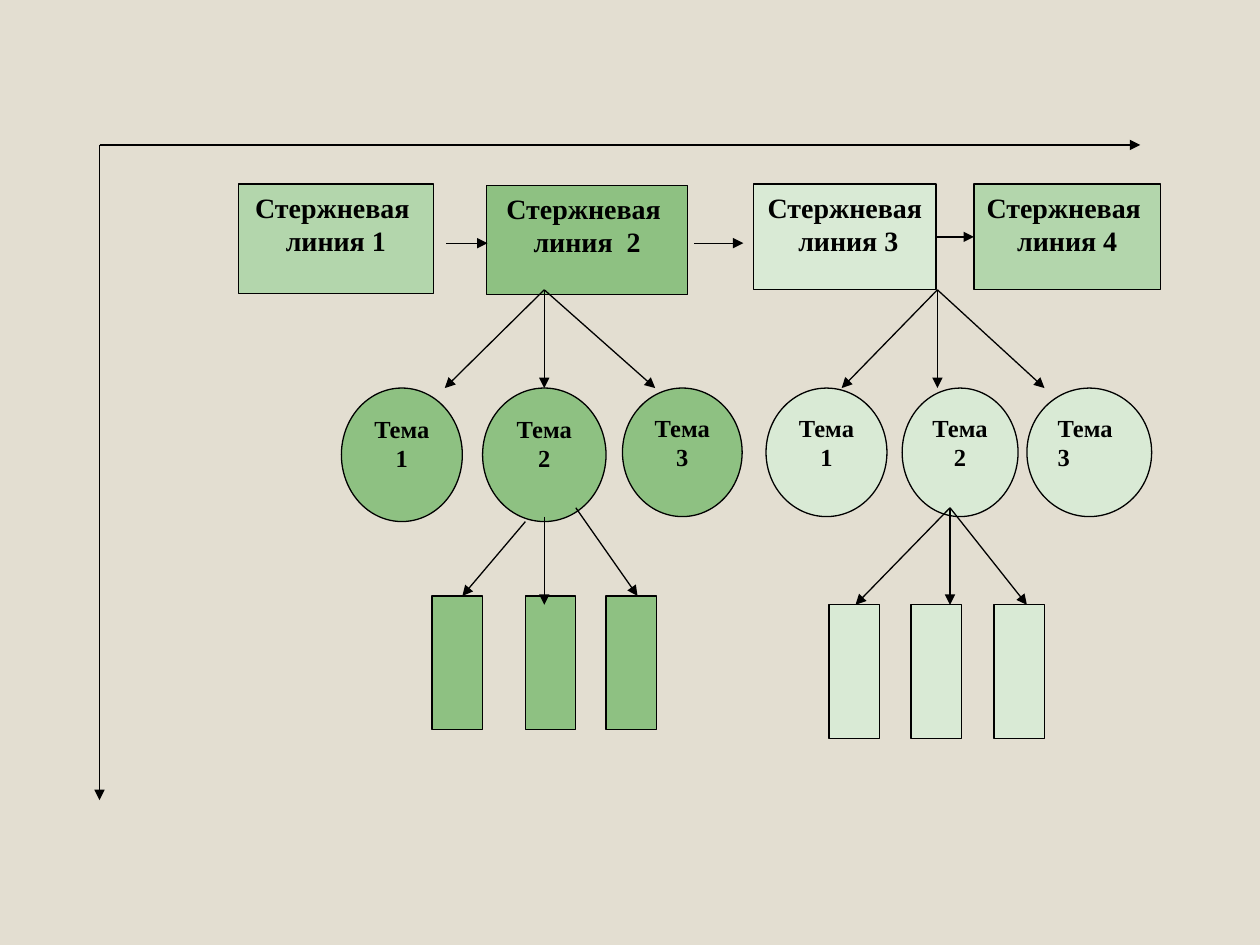
from pptx import Presentation
from pptx.dml.color import RGBColor
from pptx.enum.shapes import MSO_CONNECTOR as Connector, MSO_SHAPE as Preset
from pptx.enum.text import MSO_ANCHOR as Anchor, PP_ALIGN as Align
from pptx.oxml.ns import qn
from pptx.util import Inches, Pt
from lxml.etree import SubElement

THEME = {
    "background": "E3DED1", "ink": "000000",
    "soft": "B3D6AC", "strong": "8EC182", "pale": "D9EAD5",
    "font": "Times New Roman", "core size": 16, "topic size": 14,
    "outline": 0.75, "axis": 1, "space after": 10,
}

# Content: text, colour, left, top, width, height
CORE_LINES = [
    ("Стержневая  линия 1", "soft", 1.89, 1.46, 1.55, 0.87),
    ("Стержневая  линия  2", "strong", 3.86, 1.47, 1.6, 0.87),
    ("Стержневая  линия 3", "pale", 5.98, 1.46, 1.45, 0.84),
    ("Стержневая  линия 4", "soft", 7.73, 1.46, 1.48, 0.84),
]

# Topics: text, left, width, height, alignment; leaves: left edges
TOPIC_TOP = 3.08
LEAF_WIDTH, LEAF_HEIGHT = 0.4, 1.06
BRANCHES = [
    {
        "colour": "strong", "leaf top": 4.73,
        "topics": [("Тема 1", 2.71, 0.96, 1.06, Align.CENTER),
                   ("Тема 2", 3.83, 0.98, 1.06, Align.CENTER),
                   ("Тема 3", 4.94, 0.95, 1.02, Align.CENTER)],
        "leaves": [3.43, 4.17, 4.81],
        "topic arrows": ((4.32, 2.3), [3.53, 4.32, 5.2]),
        "leaf arrows": [((4.17, 4.14), (3.67, 4.73)),
                        ((4.32, 4.1), (4.32, 4.8)),
                        ((4.57, 4.03), (5.06, 4.73))],
    },
    {
        "colour": "pale", "leaf top": 4.8,
        "topics": [("Тема 1", 6.08, 0.96, 1.02, Align.CENTER),
                   ("Тема 2", 7.16, 0.92, 1.02, Align.CENTER),
                   ("Тема 3", 8.15, 0.99, 1.02, Align.LEFT)],
        "leaves": [6.58, 7.23, 7.89],
        "topic arrows": ((7.44, 2.3), [6.68, 7.44, 8.29]),
        "leaf arrows": [((7.54, 4.03), (x, 4.8)) for x in (6.79, 7.54, 8.15)],
    },
]

AXIS_ORIGIN = (0.79, 1.15)
AXIS_ENDS = [(9.05, 1.15), (0.79, 6.35)]
CORE_ARROWS = [((3.54, 1.93), (3.87, 1.93)), ((5.51, 1.93), (5.9, 1.93))]


def colour(name):
    return RGBColor.from_string(THEME[name])


def set_attributes(target, values):
    for name, value in values.items():
        setattr(target, name, value)


def add_box(slide, preset, place, fill, text="", size=None, align=Align.CENTER):
    shape = slide.shapes.add_shape(preset, *map(Inches, place))
    shape.shadow.inherit = False
    shape.fill.solid()
    shape.fill.fore_color.rgb = colour(fill)
    shape.line.color.rgb = colour("ink")
    shape.line.width = Pt(THEME["outline"])
    if text:
        frame = shape.text_frame
        set_attributes(frame, {"word_wrap": True, "vertical_anchor": Anchor.TOP})
        paragraph = frame.paragraphs[0]
        set_attributes(paragraph, {"alignment": align,
                                   "space_after": Pt(THEME["space after"])})
        run = paragraph.add_run()
        run.text = text
        set_attributes(run.font, {"name": THEME["font"], "size": Pt(THEME[size]),
                                  "bold": True})
        run.font.color.rgb = colour("ink")
    return shape


def add_arrow(slide, start, end, weight="outline"):
    arrow = slide.shapes.add_connector(Connector.STRAIGHT, *map(Inches, start + end))
    arrow.line.color.rgb = colour("ink")
    arrow.line.width = Pt(THEME[weight])
    SubElement(arrow.line._get_or_add_ln(), qn("a:tailEnd"), type="triangle")
    SubElement(arrow._element.spPr, qn("a:effectLst"))
    return arrow


def main():
    presentation = Presentation()
    presentation.slide_width, presentation.slide_height = Inches(10), Inches(7.5)
    slide = presentation.slides.add_slide(presentation.slide_layouts[6])
    slide.background.fill.solid()
    slide.background.fill.fore_color.rgb = colour("background")

    # Axes
    for end in AXIS_ENDS:
        add_arrow(slide, AXIS_ORIGIN, end, "axis")

    # Core lines and the arrows between them
    cores = [add_box(slide, Preset.RECTANGLE, place, fill, text, "core size")
             for text, fill, *place in CORE_LINES]
    for start, end in CORE_ARROWS:
        add_arrow(slide, start, end)
    joined = add_arrow(slide, (7.43, 1.88), (7.73, 1.88))
    joined.begin_connect(cores[2], 3)
    joined.end_connect(cores[3], 1)

    # Topics, leaves and their arrows
    for branch in BRANCHES:
        fill, leaf_top = branch["colour"], branch["leaf top"]
        for text, left, width, height, align in branch["topics"]:
            add_box(slide, Preset.OVAL, (left, TOPIC_TOP, width, height),
                    fill, text, "topic size", align)
        for left in branch["leaves"]:
            add_box(slide, Preset.RECTANGLE,
                    (left, leaf_top, LEAF_WIDTH, LEAF_HEIGHT), fill)
        origin, targets = branch["topic arrows"]
        for x in targets:
            add_arrow(slide, origin, (x, TOPIC_TOP))
        for start, end in branch["leaf arrows"]:
            add_arrow(slide, start, end)

    presentation.save("out.pptx")


if __name__ == "__main__":
    main()
